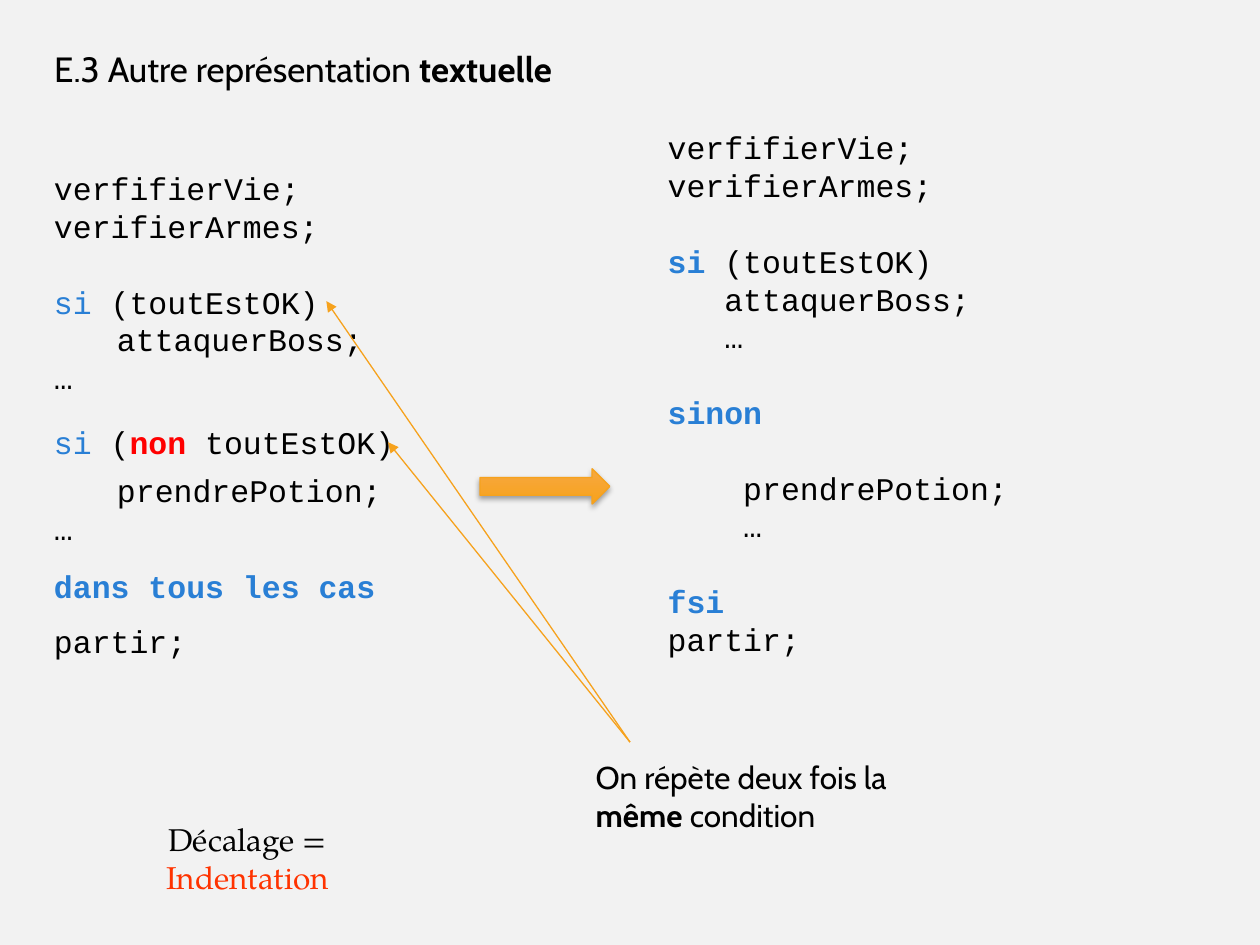
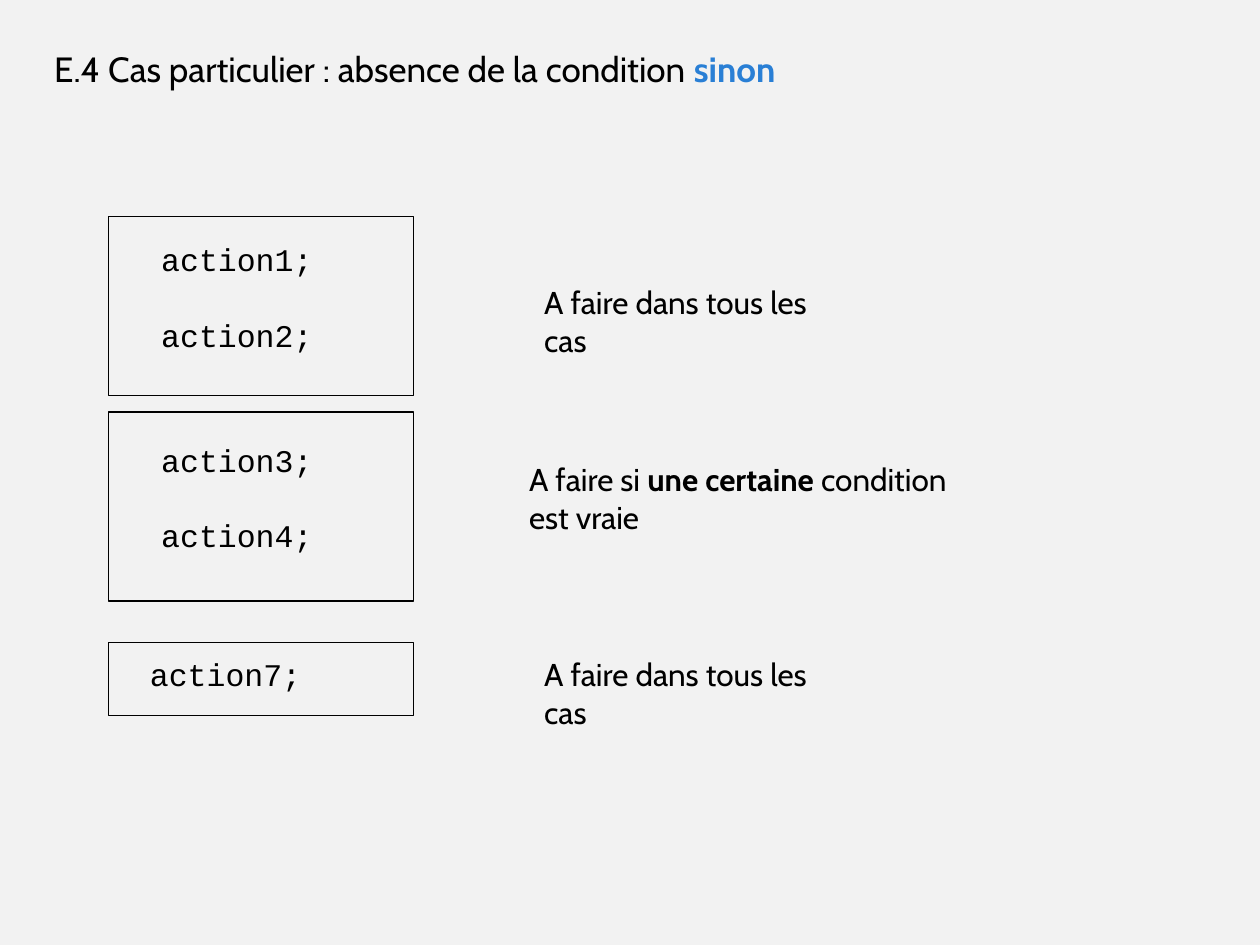
"""Build two slides on textual pseudo-code and the absence of an else branch."""
from dataclasses import dataclass

import pptx
import pptx.dml.color
import pptx.enum.shapes
import pptx.enum.text
import pptx.oxml
import pptx.oxml.ns
import pptx.slide
import pptx.text.text
import pptx.util

Inches = pptx.util.Inches
RGBColor = pptx.dml.color.RGBColor
SHAPES = pptx.enum.shapes.MSO_SHAPE
PP_ALIGN = pptx.enum.text.PP_ALIGN

BLACK = RGBColor(0x00, 0x00, 0x00)
PAPER = RGBColor(0xF2, 0xF2, 0xF2)
BLUE = RGBColor(0x29, 0x7F, 0xD5)
RED = RGBColor(0xFF, 0x00, 0x00)
VERMILION = RGBColor(0xFF, 0x33, 0x00)
ORANGE = RGBColor(0xF6, 0xA2, 0x1D)
ORANGE_TOP = RGBColor(0xF6, 0xA8, 0x42)
ORANGE_BOTTOM = RGBColor(0xF8, 0xA2, 0x1A)

SANS = "Cabin"
CODE = "Courier New"
SERIF = "TeX Gyre Pagella"
CODE_PITCH = 21.6
MARGIN = 0.33


@dataclass(frozen=True)
class Run:
    text: str
    color: RGBColor = BLACK
    bold: bool = False


@dataclass(frozen=True)
class Line:
    runs: tuple[Run, ...]
    blank_before: int = 0


@dataclass(frozen=True)
class Box:
    left: float
    top: float
    width: float
    height: float
    lines: tuple[Line, ...]
    font: str = CODE
    wrap: bool = True
    align: PP_ALIGN = PP_ALIGN.LEFT


@dataclass(frozen=True)
class Step:
    """A framed group of actions with its caption."""
    top: float
    height: float
    code: Box
    caption: Box


def line(*runs: Run | str, blank_before: int = 0) -> Line:
    """Make a line, turning plain strings into black runs."""
    return Line(tuple(Run(r) if isinstance(r, str) else r for r in runs), blank_before)


def keyword(text: str) -> Run:
    """Make a bold blue run."""
    return Run(text, BLUE, True)


def add_runs(p: pptx.text.text._Paragraph, runs: tuple[Run, ...], font: str, size: float) -> None:
    """Add formatted runs to a paragraph."""
    for run in runs:
        r = p.add_run()
        r.text = run.text
        r.font.name = font
        r.font.size = pptx.util.Pt(size)
        r.font.bold = run.bold
        r.font.color.rgb = run.color


def add_title(slide: pptx.slide.Slide, title: Line) -> None:
    """Place and fill the title placeholder."""
    sp = slide.shapes.title
    sp.left, sp.top = Inches(MARGIN), Inches(MARGIN)
    sp.width, sp.height = Inches(6.78), Inches(0.43)
    tf = sp.text_frame
    tf.auto_size = pptx.enum.text.MSO_AUTO_SIZE.NONE
    tf.vertical_anchor = pptx.enum.text.MSO_ANCHOR.TOP
    p = tf.paragraphs[0]
    p.alignment = PP_ALIGN.LEFT
    add_runs(p, title.runs, SANS, 20)


def add_box(slide: pptx.slide.Slide, box: Box) -> None:
    """Draw a text box; code lines keep a fixed pitch."""
    sp = slide.shapes.add_textbox(Inches(box.left), Inches(box.top), Inches(box.width), Inches(box.height))
    tf = sp.text_frame
    tf.word_wrap = box.wrap
    for i, text_line in enumerate(box.lines):
        p = tf.add_paragraph() if i else tf.paragraphs[0]
        p.alignment = box.align
        if box.font == CODE:
            p.line_spacing = pptx.util.Pt(CODE_PITCH)
        if text_line.blank_before:
            p.space_before = pptx.util.Pt(CODE_PITCH * text_line.blank_before)
        add_runs(p, text_line.runs, box.font, 18)


def add_pointer(slide: pptx.slide.Slide, x: float, y: float) -> None:
    """Draw an arrow from the remark to a condition."""
    cx = slide.shapes.add_connector(
        pptx.enum.shapes.MSO_CONNECTOR.STRAIGHT, Inches(5), Inches(5.89), Inches(x), Inches(y))
    cx.line.color.rgb = ORANGE
    cx.line.width = pptx.util.Pt(0.75)
    ln = cx.line._get_or_add_ln()
    ln.append(pptx.oxml.parse_xml(f'<a:tailEnd {pptx.oxml.ns.nsdecls("a")} type="triangle"/>'))
    cx._element.spPr.append(pptx.oxml.parse_xml(f'<a:effectLst {pptx.oxml.ns.nsdecls("a")}/>'))


def add_block_arrow(slide: pptx.slide.Slide) -> None:
    """Draw the shaded arrow between the two programs."""
    sp = slide.shapes.add_shape(SHAPES.RIGHT_ARROW, Inches(3.81), Inches(3.72), Inches(1.03), Inches(0.28))
    sp.fill.gradient()
    sp.fill.gradient_angle = 270
    for stop, color in zip(sp.fill.gradient_stops, (ORANGE_TOP, ORANGE_BOTTOM)):
        stop.color.rgb = color
    sp.line.color.rgb = ORANGE
    sp.line.width = pptx.util.Pt(0.75)
    sp.shadow.inherit = False
    effects = sp._element.spPr.find(pptx.oxml.ns.qn("a:effectLst"))
    effects.append(pptx.oxml.parse_xml(
        f'<a:outerShdw {pptx.oxml.ns.nsdecls("a")} blurRad="{pptx.util.Pt(3.1)}" '
        f'dist="{pptx.util.Pt(1.8)}" dir="5400000" rotWithShape="0">'
        '<a:srgbClr val="000000"><a:alpha val="35000"/></a:srgbClr></a:outerShdw>'))


def add_step(slide: pptx.slide.Slide, step: Step) -> None:
    """Draw a framed group of actions and its caption."""
    sp = slide.shapes.add_shape(SHAPES.RECTANGLE, Inches(0.86), Inches(step.top), Inches(2.42), Inches(step.height))
    sp.fill.background()
    sp.line.color.rgb = BLACK
    sp.line.width = pptx.util.Pt(0.75)
    sp.shadow.inherit = False
    add_box(slide, step.code)
    add_box(slide, step.caption)


def actions(left: float, top: float, *names: str) -> Box:
    """Make a box of actions, one blank line apart."""
    lines = tuple(line(name, blank_before=min(i, 1)) for i, name in enumerate(names))
    return Box(left, top, 1.4, 0.6 * len(names) - 0.2, lines, wrap=False, align=PP_ALIGN.CENTER)


def always(top: float) -> Box:
    """Make the caption of an unconditional step."""
    return Box(4.22, top, 2.64, 0.4, (line("A faire dans tous les cas"),), SANS)


TEXT_BOXES = (
    Box(MARGIN, 1.29, 5.12, 4, (
        line("verfifierVie;"),
        line("verifierArmes;"),
        line("\tattaquerBoss;", blank_before=2),
        line("…"),
        line("\tprendrePotion;", blank_before=2),
        line("…"),
        line("partir;", blank_before=2))),
    Box(MARGIN, 4.45, 2.75, 0.4, (line(keyword("dans tous les cas")),), wrap=False),
    Box(MARGIN, 2.2, 3.48, 0.4, (line(Run("si", BLUE), " (toutEstOK)"),)),
    Box(MARGIN, 3.31, 4.37, 0.4, (
        line(Run("si", BLUE), " (", Run("non ", RED, True), "toutEstOK)"),)),
    Box(5.2, 0.97, 4.15, 4.3, (
        line("verfifierVie;"),
        line("verifierArmes;"),
        line(keyword("si"), " (toutEstOK)", blank_before=1),
        line("   attaquerBoss;"),
        line("   …"),
        line(keyword("sinon"), blank_before=1),
        line("    prendrePotion;", blank_before=1),
        line("    …"),
        line(keyword("fsi"), blank_before=1),
        line("partir;"))),
    Box(0.58, 6.46, 2.77, 0.7, (line("Décalage = ", Run("Indentation", VERMILION)),),
        SERIF, align=PP_ALIGN.CENTER),
    Box(4.63, 5.97, 2.94, 0.71, (
        line("On répète deux fois la ", Run("même", bold=True), " condition"),), SANS),
)

STEPS = (
    Step(1.72, 1.42, actions(1.18, 1.86, "action1;", "action2;"), always(2.2)),
    Step(3.27, 1.5, actions(1.18, 3.45, "action3;", "action4;"), Box(4.1, 3.6, 3.85, 0.7, (
        line("A faire si ", Run("une certaine", bold=True), " condition"),
        line("est vraie")), SANS)),
    Step(5.1, 0.58, actions(1.09, 5.15, "action7;"), always(5.15)),
)


def main() -> None:
    """Build and save the presentation."""
    prs = pptx.Presentation()
    prs.slide_width, prs.slide_height = Inches(10), Inches(7.5)
    fill = prs.slide_master.background.fill
    fill.solid()
    fill.fore_color.rgb = PAPER
    title_only = prs.slide_layouts.get_by_name("Title Only")

    slide = prs.slides.add_slide(title_only)
    add_title(slide, line("E.3 Autre représentation ", Run("textuelle", bold=True)))
    for box in TEXT_BOXES:
        add_box(slide, box)
    add_block_arrow(slide)
    for x, y in ((2.59, 2.39), (3.08, 3.51)):
        add_pointer(slide, x, y)

    slide = prs.slides.add_slide(title_only)
    add_title(slide, line("E.4 Cas particulier : absence de la condition ", keyword("sinon")))
    for step in STEPS:
        add_step(slide, step)

    prs.save("out.pptx")


if __name__ == "__main__":
    main()
